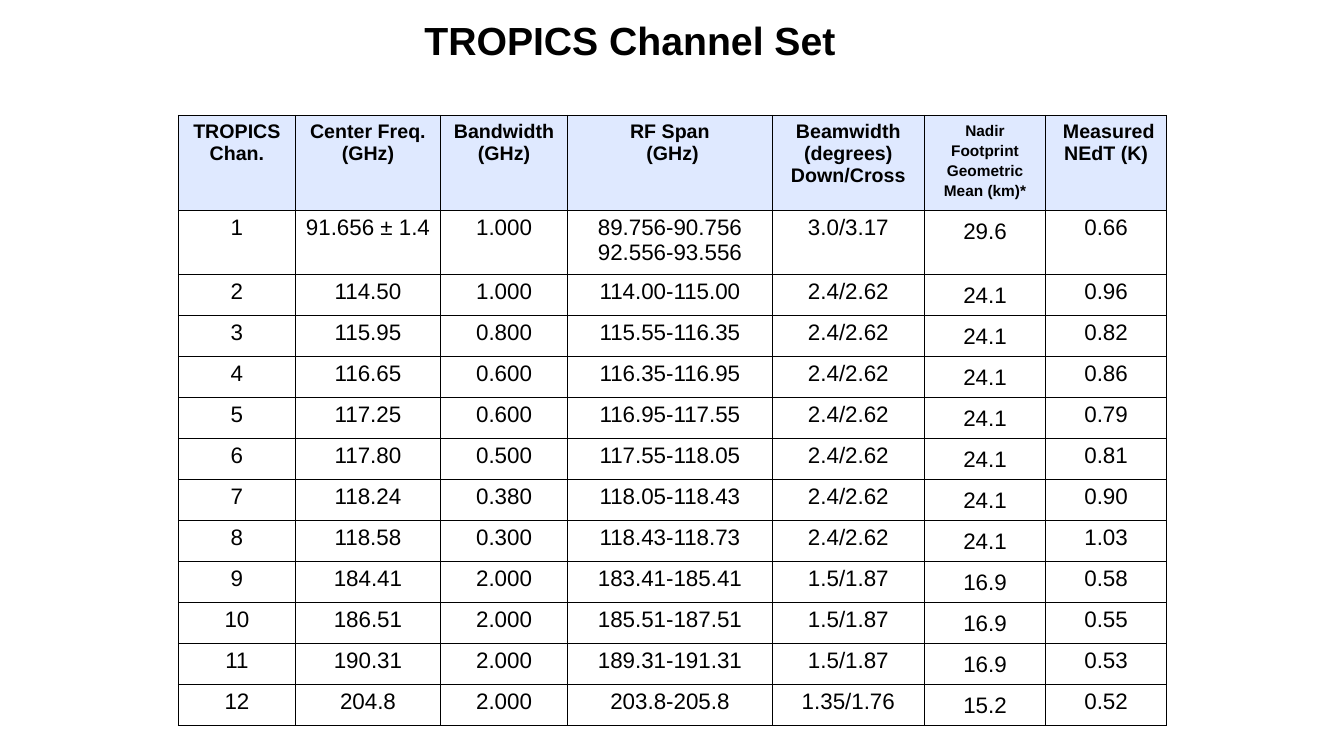
from pptx import Presentation
from pptx import util as u
from pptx.dml import color
from pptx.enum import text
from pptx.oxml import parse_xml
from pptx.oxml import ns

Pt = u.Pt
BLACK = "000000"
HEAD = "DFE9FF"
FOOT = 5
WIDTHS = [83.5, 103.7, 90.8, 146.1, 108.8, 86.5, 86.5]
TITLES = [
    "TROPICS Chan.",
    "Center Freq. (GHz)",
    "Bandwidth (GHz)",
    "RF Span\n (GHz)",
    "Beamwidth (degrees)\nDown/Cross",
    "Nadir Footprint Geometric Mean (km)*",
    " Measured NEdT (K)",
]
BANDS = [
    ("91.656 ± 1.4", "1.000", "89.756-90.756\n92.556-93.556", "3.0/3.17", "29.6", "0.66"),
    ("114.50", "1.000", "114.00-115.00", "2.4/2.62", "24.1", "0.96"),
    ("115.95", "0.800", "115.55-116.35", "2.4/2.62", "24.1", "0.82"),
    ("116.65", "0.600", "116.35-116.95", "2.4/2.62", "24.1", "0.86"),
    ("117.25", "0.600", "116.95-117.55", "2.4/2.62", "24.1", "0.79"),
    ("117.80", "0.500", "117.55-118.05", "2.4/2.62", "24.1", "0.81"),
    ("118.24", "0.380", "118.05-118.43", "2.4/2.62", "24.1", "0.90"),
    ("118.58", "0.300", "118.43-118.73", "2.4/2.62", "24.1", "1.03"),
    ("184.41", "2.000", "183.41-185.41", "1.5/1.87", "16.9", "0.58"),
    ("186.51", "2.000", "185.51-187.51", "1.5/1.87", "16.9", "0.55"),
    ("190.31", "2.000", "189.31-191.31", "1.5/1.87", "16.9", "0.53"),
    ("204.8", "2.000", "203.8-205.8", "1.35/1.76", "15.2", "0.52"),
]
HEIGHTS = [63.8, 42.8] + [27.7] * (len(BANDS) - 1)


def rgb(code):
    return color.RGBColor.from_string(code)


def write(frame, words, size, bold, space=None):
    frame.word_wrap = True
    for i, line in enumerate(words.split("\n")):
        para = frame.paragraphs[0] if i == 0 else frame.add_paragraph()
        para.alignment = text.PP_ALIGN.CENTER
        if space:
            para.line_spacing = space
        run = para.add_run()
        run.text = line
        font = run.font
        font.name = "Arial"
        font.size = Pt(size)
        font.bold = bold
        font.color.rgb = rgb(BLACK)


def add_title(slide, words):
    box = slide.shapes.add_textbox(Pt(194.4), Pt(8), Pt(511.2), Pt(64))
    frame = box.text_frame
    frame.vertical_anchor = text.MSO_ANCHOR.MIDDLE
    write(frame, words, 28, True, Pt(9.9))


def edge(cell):
    props = cell._tc.get_or_add_tcPr()
    for i, side in enumerate("LRTB"):
        props.insert(i, parse_xml(
            f'<a:ln{side} {ns.nsdecls("a")} w="{Pt(0.96)}"><a:solidFill>'
            f'<a:srgbClr val="{BLACK}"/></a:solidFill></a:ln{side}>'))


def fill_cell(cell, words, row, col):
    head = row == 0
    foot = col == FOOT
    if head:
        cell.fill.solid()
        cell.fill.fore_color.rgb = rgb(HEAD)
    else:
        cell.fill.background()
    if not foot:
        cell.margin_left = cell.margin_right = Pt(5)
    size = (11 if foot else 14) if head else 16
    write(cell.text_frame, words, size, head, 1.15 if foot else None)
    edge(cell)


def add_grid(slide, rows):
    grid = slide.shapes.add_table(
        len(rows), len(WIDTHS), Pt(127.5), Pt(82.5),
        Pt(sum(WIDTHS)), Pt(sum(HEIGHTS))).table
    grid.first_row = False
    grid.horz_banding = False
    for col, width in zip(grid.columns, WIDTHS):
        col.width = Pt(width)
    for r, (line, height) in enumerate(zip(rows, HEIGHTS)):
        grid.rows[r].height = Pt(height)
        for c, words in enumerate(line):
            fill_cell(grid.cell(r, c), words, r, c)


def main():
    deck = Presentation()
    deck.slide_width = Pt(960)
    deck.slide_height = Pt(540)
    slide = deck.slides.add_slide(deck.slide_layouts[6])
    add_title(slide, "TROPICS Channel Set")
    rows = [(str(n), *band) for n, band in enumerate(BANDS, 1)]
    add_grid(slide, [TITLES] + rows)
    deck.save("out.pptx")


if __name__ == "__main__":
    main()
